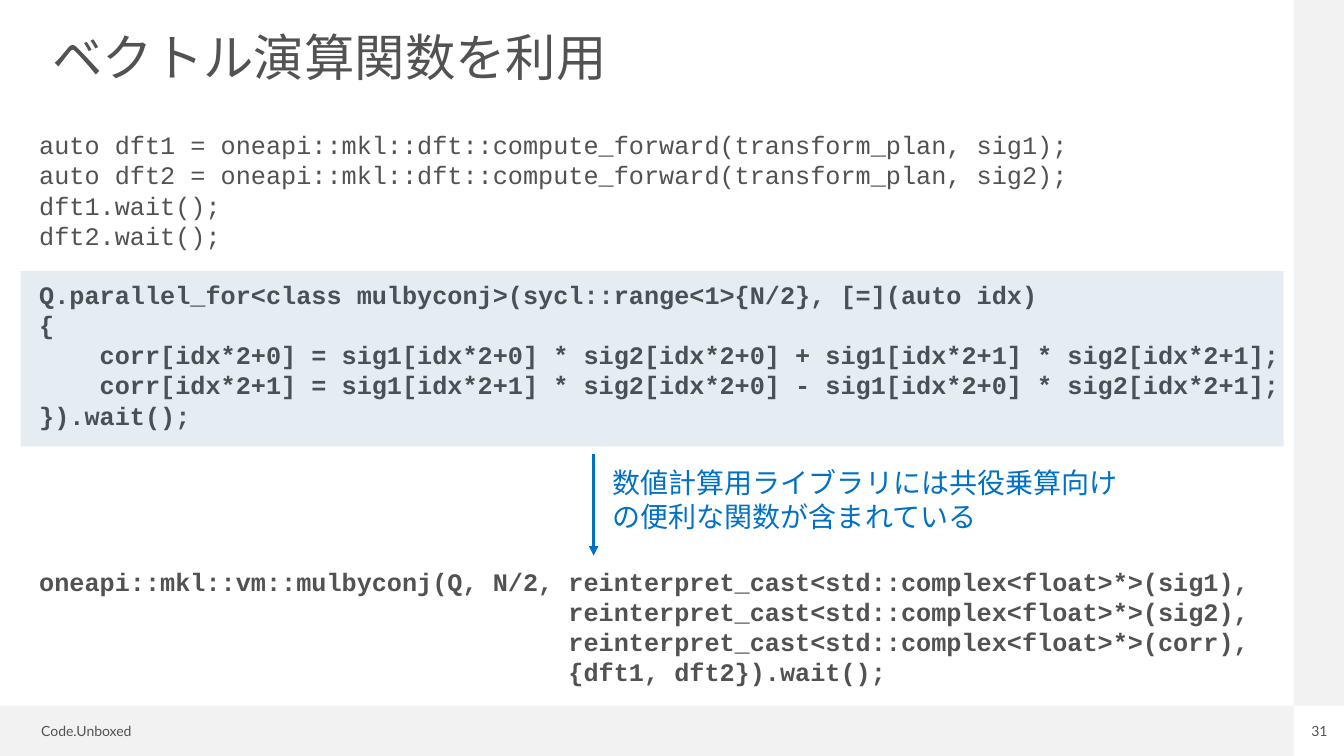
"""Build the slide on using vector math functions."""
from lxml import etree
from pptx import Presentation
from pptx.dml.color import RGBColor
from pptx.enum.shapes import MSO_CONNECTOR, MSO_SHAPE
from pptx.enum.text import MSO_ANCHOR, PP_ALIGN
from pptx.oxml.ns import qn
from pptx.util import Cm, Pt

RECTANGLE = MSO_SHAPE.RECTANGLE
STRAIGHT = MSO_CONNECTOR.STRAIGHT
MIDDLE, TOP = MSO_ANCHOR.MIDDLE, MSO_ANCHOR.TOP
LEFT, CENTER = PP_ALIGN.LEFT, PP_ALIGN.CENTER
GREY, BLUE, WHITE, PALE, NAVY = "525252", "0071C5", "FFFFFF", "F2F2F2", "004A86"
NO_INSETS = (0, 0, 0, 0)
TITLE_FORMAT = {"name": "Lato", "size": Pt(36), "bold": False}
CODE_FORMAT = {"name": "Courier New", "size": Pt(18), "bold": False}
BOLD_CODE_FORMAT = {**CODE_FORMAT, "bold": True}
NOTE_FORMAT = {"name": "Lato", "size": Pt(20)}
FOOTER_FORMAT = {"name": "Lato", "size": Pt(10)}


def color(hex_value):
    return RGBColor.from_string(hex_value)


def write(box, lines, insets, anchor, wrap=True, align=LEFT, ink=GREY):
    frame = box.text_frame
    frame.word_wrap = wrap
    frame.vertical_anchor = anchor
    sides = ("margin_left", "margin_top", "margin_right", "margin_bottom")
    for side, inset in zip(sides, insets):
        setattr(frame, side, Cm(inset))
    for index, (text, font_format) in enumerate(lines):
        para = frame.add_paragraph() if index else frame.paragraphs[0]
        para.alignment = align
        span = para.add_run()
        span.text = text
        span.font.color.rgb = color(ink)
        for key, value in font_format.items():
            setattr(span.font, key, value)
    return frame.paragraphs


deck = Presentation()
deck.slide_width, deck.slide_height = Cm(33.87), Cm(19.05)
page = deck.slides.add_slide(deck.slide_layouts[5])
shapes = page.shapes

bands = [(0, 17.78, 32.6, 1.27), (32.6, 0, 1.27, 17.78)]
for place in bands:
    band = shapes.add_shape(RECTANGLE, *map(Cm, place))
    band.shadow.inherit = False
    band.fill.solid()
    band.fill.fore_color.rgb = color(PALE)
    band.line.fill.background()

title = shapes.title
title.left, title.top, title.width, title.height = Cm(1.07), Cm(0.48), Cm(30.48), Cm(2.06)
title_lines = write(title, [("ベクトル演算関数を利用", TITLE_FORMAT)], (0.25, 0.13, 0.25, 0.13), MIDDLE)
title_lines[0].line_spacing = 0.9

transform_code = [
    "auto dft1 = oneapi::mkl::dft::compute_forward(transform_plan, sig1);",
    "auto dft2 = oneapi::mkl::dft::compute_forward(transform_plan, sig2);",
    "dft1.wait();",
    "dft2.wait();",
]
loop_code = [
    "Q.parallel_for<class mulbyconj>(sycl::range<1>{N/2}, [=](auto idx)",
    "{",
    "    corr[idx*2+0] = sig1[idx*2+0] * sig2[idx*2+0] + sig1[idx*2+1] * sig2[idx*2+1];",
    "    corr[idx*2+1] = sig1[idx*2+1] * sig2[idx*2+0] - sig1[idx*2+0] * sig2[idx*2+1];",
    "}).wait();",
]
library_code = [
    "oneapi::mkl::vm::mulbyconj(Q, N/2, reinterpret_cast<std::complex<float>*>(sig1),",
    "                                   reinterpret_cast<std::complex<float>*>(sig2),",
    "                                   reinterpret_cast<std::complex<float>*>(corr),",
    "                                   {dft1, dft2}).wait();",
]
before = [(line, CODE_FORMAT) for line in transform_code]
before += [(line, BOLD_CODE_FORMAT) for line in loop_code]
after = [(line, BOLD_CODE_FORMAT) for line in library_code]
code_blocks = [
    ((0.99, 3.2, 31.55, 7.7), before),
    ((0.99, 14.25, 31.14, 3.07), after),
]
code_paragraphs = []
for place, lines in code_blocks:
    block = shapes.add_shape(RECTANGLE, *map(Cm, place))
    block.shadow.inherit = False
    block.fill.solid()
    block.fill.fore_color.rgb = color(WHITE)
    block.line.fill.background()
    code_paragraphs.append(write(block, lines, NO_INSETS, MIDDLE))
code_paragraphs[0][len(transform_code)].space_before = Pt(20.4)

note = shapes.add_textbox(Cm(15.11), Cm(11.61), Cm(13.49), Cm(2.13))
note_text = "数値計算用ライブラリには共役乗算向けの便利な関数が含まれている"
write(note, [(note_text, NOTE_FORMAT)], (0.33, 0.13, 0.25, 0.13), TOP, ink=BLUE)

arrow = shapes.add_connector(STRAIGHT, Cm(14.96), Cm(11.43), Cm(14.96), Cm(14))
arrow.line.color.rgb = color(BLUE)
arrow.line.width = Pt(2.25)
etree.SubElement(arrow.line._get_or_add_ln(), qn("a:tailEnd"), type="triangle")
etree.SubElement(arrow._element.spPr, qn("a:effectLst"))

highlight = shapes.add_shape(RECTANGLE, Cm(0.52), Cm(6.83), Cm(31.83), Cm(4.42))
highlight.shadow.inherit = False
highlight.fill.solid()
highlight.fill.fore_color.rgb = color(NAVY)
highlight.line.fill.background()
tint = highlight._element.spPr.find(qn("a:solidFill")).find(qn("a:srgbClr"))
etree.SubElement(tint, qn("a:alpha"), val="10000")

footer = shapes.add_textbox(Cm(0.79), Cm(18.08), Cm(3.02), Cm(0.69))
write(footer, [("Code.Unboxed", FOOTER_FORMAT)], (0.25, 0.13, 0.25, 0.13), TOP, wrap=False)
number = shapes.add_textbox(Cm(33.02), Cm(18.21), Cm(0.46), Cm(0.43))
write(number, [("31", FOOTER_FORMAT)], NO_INSETS, TOP, wrap=False, align=CENTER)

deck.save("out.pptx")
